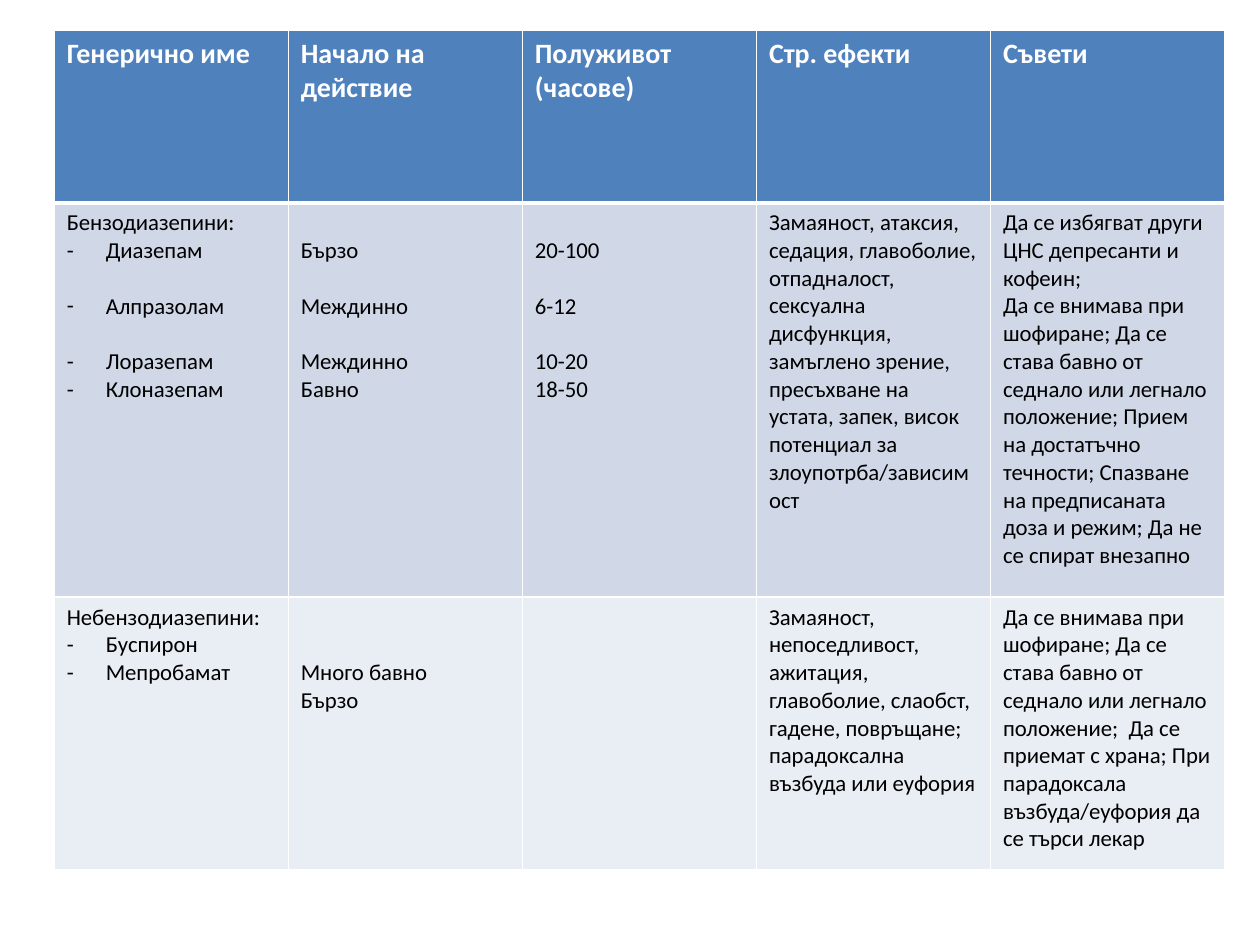
from lxml.etree import SubElement
from pptx import Presentation
from pptx.dml.color import RGBColor
from pptx.oxml.ns import qn
from pptx.util import Inches, Pt

FONT = "Calibri"
BODY_SIZE = 13
LINE_HEIGHT = 15.87  # points, one body line
HEADER_FILL, WHITE, BLACK = "4F81BD", "FFFFFF", "000000"
ROW_FILLS = [HEADER_FILL, "D0D8E8", "E9EDF4"]
ROW_HEIGHTS = [1.37, 3.13, 2.16]
COLUMN_WIDTH = 1.858

# Each entry is (text, blank lines above, is a list item)
HEADERS = ["Генерично име", "Начало на действие", "Полуживот (часове)",
           "Стр. ефекти", "Съвети"]
ROWS = [
    [[(header, 0, False)] for header in HEADERS],
    [
        [("Бензодиазепини:", 0, False), ("Диазепам", 0, True),
         ("Алпразолам", 1, True), ("Лоразепам", 1, True), ("Клоназепам", 0, True)],
        [("Бързо", 1, False), ("Междинно", 1, False),
         ("Междинно", 1, False), ("Бавно", 0, False)],
        [("20-100", 1, False), ("6-12", 1, False),
         ("10-20", 1, False), ("18-50", 0, False)],
        [("Замаяност, атаксия, седация, главоболие, отпадналост, сексуална "
          "дисфункция, замъглено зрение, пресъхване на устата, запек, висок "
          "потенциал за злоупотрба/зависимост", 0, False)],
        [("Да се избягват други ЦНС депресанти и кофеин;", 0, False),
         ("Да се внимава при шофиране; Да се става бавно от седнало или легнало "
          "положение; Прием на достатъчно течности; Спазване на предписаната "
          "доза и режим; Да не се спират внезапно", 0, False)],
    ],
    [
        [("Небензодиазепини:", 0, False), ("Буспирон", 0, True),
         ("Мепробамат", 0, True)],
        [("Много бавно", 2, False), ("Бързо", 0, False)],
        [],
        [("Замаяност, непоседливост, ажитация, главоболие, слаобст, гадене, "
          "повръщане; парадоксална възбуда или еуфория", 0, False)],
        [("Да се внимава при шофиране; Да се става бавно от седнало или легнало "
          "положение;  Да се приемат с храна; При парадоксала възбуда/еуфория да "
          "се търси лекар", 0, False)],
    ],
]


def color(value):
    return RGBColor.from_string(value)


def add_borders(cell, widths):
    """Draw white borders; widths maps the sides L, R, T, B to points."""
    properties = cell._tc.get_or_add_tcPr()
    for side, width in widths.items():
        line = SubElement(properties, qn(f"a:ln{side}"), w=str(Pt(width)))
        fill = SubElement(line, qn("a:solidFill"))
        SubElement(fill, qn("a:srgbClr"), val=WHITE)


presentation = Presentation()
presentation.slide_width = Inches(10)
presentation.slide_height = Inches(7.5)
slide = presentation.slides.add_slide(presentation.slide_layouts[6])

table = slide.shapes.add_table(
    len(ROWS), len(HEADERS), Inches(0.43), Inches(0.24),
    Inches(COLUMN_WIDTH * len(HEADERS)), Inches(sum(ROW_HEIGHTS))).table
for column in table.columns:
    column.width = Inches(COLUMN_WIDTH)

for row_index, row in enumerate(ROWS):
    table.rows[row_index].height = Inches(ROW_HEIGHTS[row_index])
    is_header = row_index == 0
    for column_index, entries in enumerate(row):
        cell = table.cell(row_index, column_index)
        add_borders(cell, {"L": 1, "R": 1, "T": 3 if row_index == 1 else 1,
                           "B": 3 if is_header else 1})
        cell.fill.solid()
        cell.fill.fore_color.rgb = color(ROW_FILLS[row_index])

        for index, (text, blank_lines, is_item) in enumerate(entries):
            gap = Pt(LINE_HEIGHT * blank_lines)
            if index == 0:
                paragraph = cell.text_frame.paragraphs[0]
                cell.margin_top = Inches(0.05) + gap
            else:
                paragraph = cell.text_frame.add_paragraph()
            if is_item:
                properties = paragraph._p.get_or_add_pPr()
                properties.set("marL", str(Inches(0.31)))
                properties.set("indent", str(-Inches(0.31)))
                SubElement(properties, qn("a:buFont"), typeface=FONT)
                SubElement(properties, qn("a:buChar"), char="-")
            if index > 0:
                paragraph.space_before = gap
            run = paragraph.add_run()
            run.text = text
            run.font.name = FONT
            run.font.size = Pt(16 if is_header else BODY_SIZE)
            run.font.bold = is_header
            run.font.color.rgb = color(WHITE if is_header else BLACK)

presentation.save("out.pptx")
